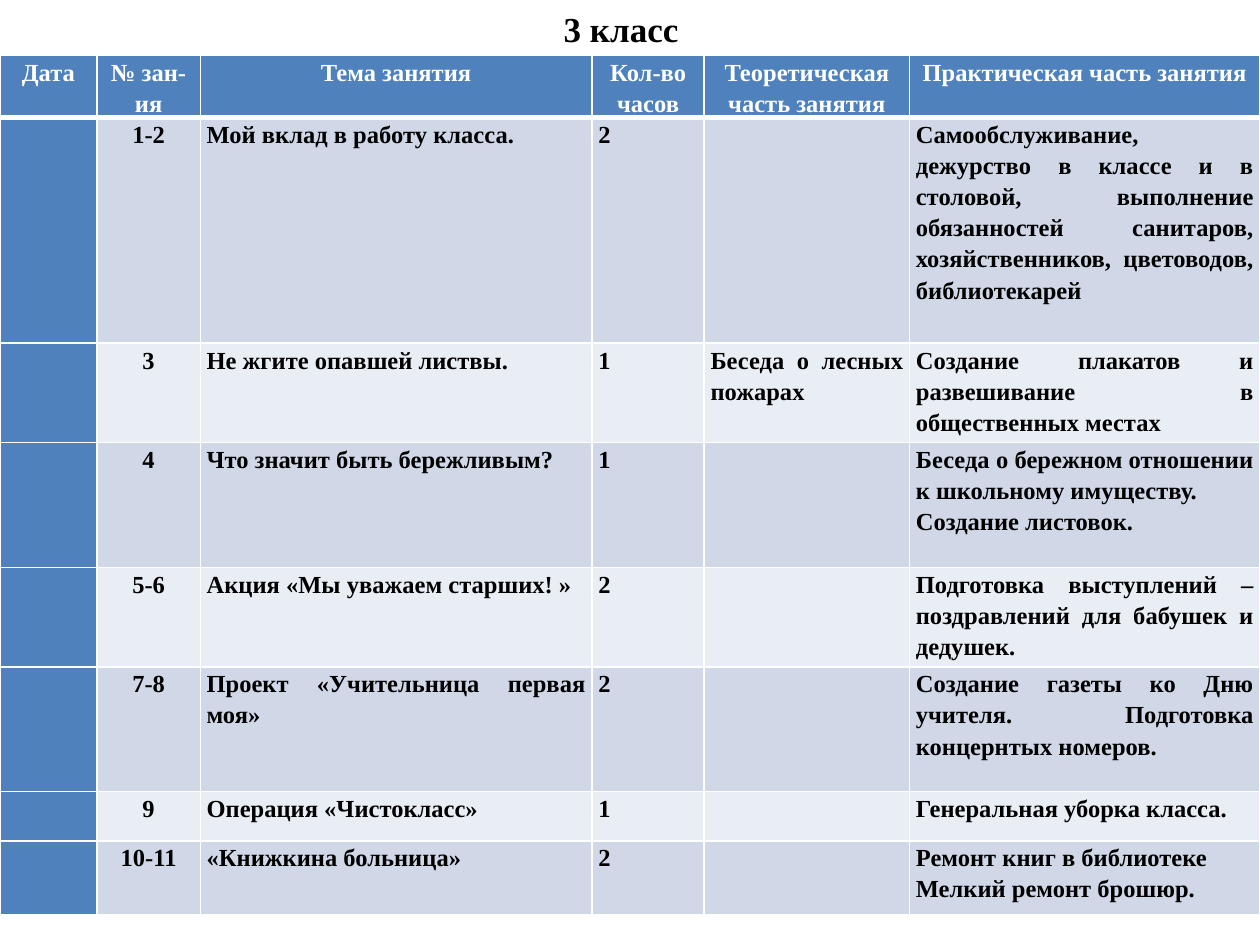
import pptx
import pptx.dml.color
import pptx.enum.text
import pptx.oxml
import pptx.oxml.ns
import pptx.util
from dataclasses import dataclass

Inches = pptx.util.Inches
Align = pptx.enum.text.PP_ALIGN


@dataclass(frozen=True)
class Theme:
    font: str = "Times New Roman"
    title_size: int = 20
    table_size: int = 14
    text: str = "000000"
    white: str = "FFFFFF"
    accent: str = "4F81BD"
    bands: tuple = ("D0D8E8", "E9EDF4")


THEME = Theme()
TITLE = "3 класс"
HEADERS = ["Дата", "№ зан-ия", "Тема занятия", "Кол-во часов",
           "Теоретическая часть занятия", "Практическая часть занятия"]
LESSONS = [
    ("", "1-2", "Мой вклад в работу класса.", "2", "",
     "Самообслуживание, дежурство в классе и в столовой, выполнение обязанностей "
     "санитаров, хозяйственников, цветоводов, библиотекарей"),
    ("", "3", "Не жгите опавшей листвы.", "1", "Беседа о лесных пожарах",
     "Создание плакатов и развешивание в общественных местах"),
    ("", "4", "Что значит быть бережливым?", "1", "",
     "Беседа о бережном отношении к школьному имуществу.\nСоздание листовок."),
    ("", "5-6", "Акция «Мы уважаем старших! »", "2", "",
     "Подготовка выступлений –поздравлений для бабушек и дедушек."),
    ("", "7-8", "Проект «Учительница первая моя»", "2", "",
     "Создание газеты ко Дню учителя. Подготовка концернтых номеров."),
    ("", "9", "Операция «Чистокласс»", "1", "", "Генеральная уборка класса."),
    ("", "10-11", "«Книжкина больница»", "2", "",
     "Ремонт книг в библиотеке\tМелкий ремонт брошюр."),
]
COLUMN_WIDTHS = [0.77, 0.82, 3.11, 0.89, 1.63, 2.78]
ROW_HEIGHTS = [0.31, 1.79, 0.79, 0.99, 0.79, 0.99, 0.39, 0.59]
NUMBER_COLUMN, PRACTICE_COLUMN = 1, 5
FIRST_LEFT_ALIGNED_ROW = 6
CENTER_TAB = 3.45


def rgb(color):
    return pptx.dml.color.RGBColor.from_string(color)


def write(frame, text, size, color=THEME.text, align=Align.CENTER, spacing=None, tab=None):
    for index, line in enumerate(text.split("\n")):
        paragraph = frame.add_paragraph() if index else frame.paragraphs[0]
        paragraph.alignment = align
        if spacing:
            paragraph.line_spacing = spacing
        if tab:
            tabs = pptx.oxml.parse_xml(
                f'<a:tabLst {pptx.oxml.ns.nsdecls("a")}>'
                f'<a:tab pos="{Inches(tab)}" algn="ctr"/></a:tabLst>')
            paragraph._p.get_or_add_pPr().append(tabs)
        run = paragraph.add_run()
        run.text = line
        run.font.name = THEME.font
        run.font.size = pptx.util.Pt(size)
        run.font.bold = True
        run.font.color.rgb = rgb(color)


def add_borders(cell, **widths):
    """Draw white borders; widths are points keyed L, R, T, B in that order."""
    for side, width in widths.items():
        cell._tc.get_or_add_tcPr().append(pptx.oxml.parse_xml(
            f'<a:ln{side} {pptx.oxml.ns.nsdecls("a")} w="{pptx.util.Pt(width)}">'
            f'<a:solidFill><a:srgbClr val="{THEME.white}"/></a:solidFill></a:ln{side}>'))


def cell_alignment(row, column):
    if row == 0 or column == NUMBER_COLUMN:
        return Align.CENTER
    if column == PRACTICE_COLUMN and row >= FIRST_LEFT_ALIGNED_ROW:
        return Align.LEFT
    return Align.JUSTIFY


def format_cell(cell, text, row, column):
    add_borders(cell, L=1, R=1, T=3 if row == 1 else 1, B=3 if row == 0 else 1)
    is_accent = row == 0 or column == 0
    cell.fill.solid()
    cell.fill.fore_color.rgb = rgb(THEME.accent if is_accent else THEME.bands[(row - 1) % 2])
    cell.margin_left = cell.margin_right = Inches(0.05)
    cell.margin_top = cell.margin_bottom = 0
    if text:
        align = cell_alignment(row, column)
        write(cell.text_frame, text, THEME.table_size, align=align, spacing=1.15,
              color=THEME.white if row == 0 else THEME.text,
              tab=None if align == Align.JUSTIFY else CENTER_TAB)


def add_lesson_table(slide):
    frame = slide.shapes.add_table(len(ROW_HEIGHTS), len(COLUMN_WIDTHS),
                                   0, Inches(0.44), Inches(10), Inches(7.08))
    table = frame.table
    for column, width in zip(table.columns, COLUMN_WIDTHS):
        column.width = Inches(width)
    for row, height in zip(table.rows, ROW_HEIGHTS):
        row.height = Inches(height)
    frame.height = Inches(7.08)
    for row, texts in enumerate([HEADERS, *LESSONS]):
        for column, text in enumerate(texts):
            format_cell(table.cell(row, column), text, row, column)


def main():
    presentation = pptx.Presentation()
    presentation.slide_width, presentation.slide_height = Inches(10), Inches(7.5)
    slide = presentation.slides.add_slide(presentation.slide_layouts[5])
    title = slide.shapes.title
    title.left, title.top = Inches(0.43), 0
    title.width, title.height = Inches(9), Inches(0.46)
    title.text_frame.vertical_anchor = pptx.enum.text.MSO_ANCHOR.MIDDLE
    write(title.text_frame, TITLE, THEME.title_size)
    add_lesson_table(slide)
    presentation.save("out.pptx")


if __name__ == "__main__":
    main()
